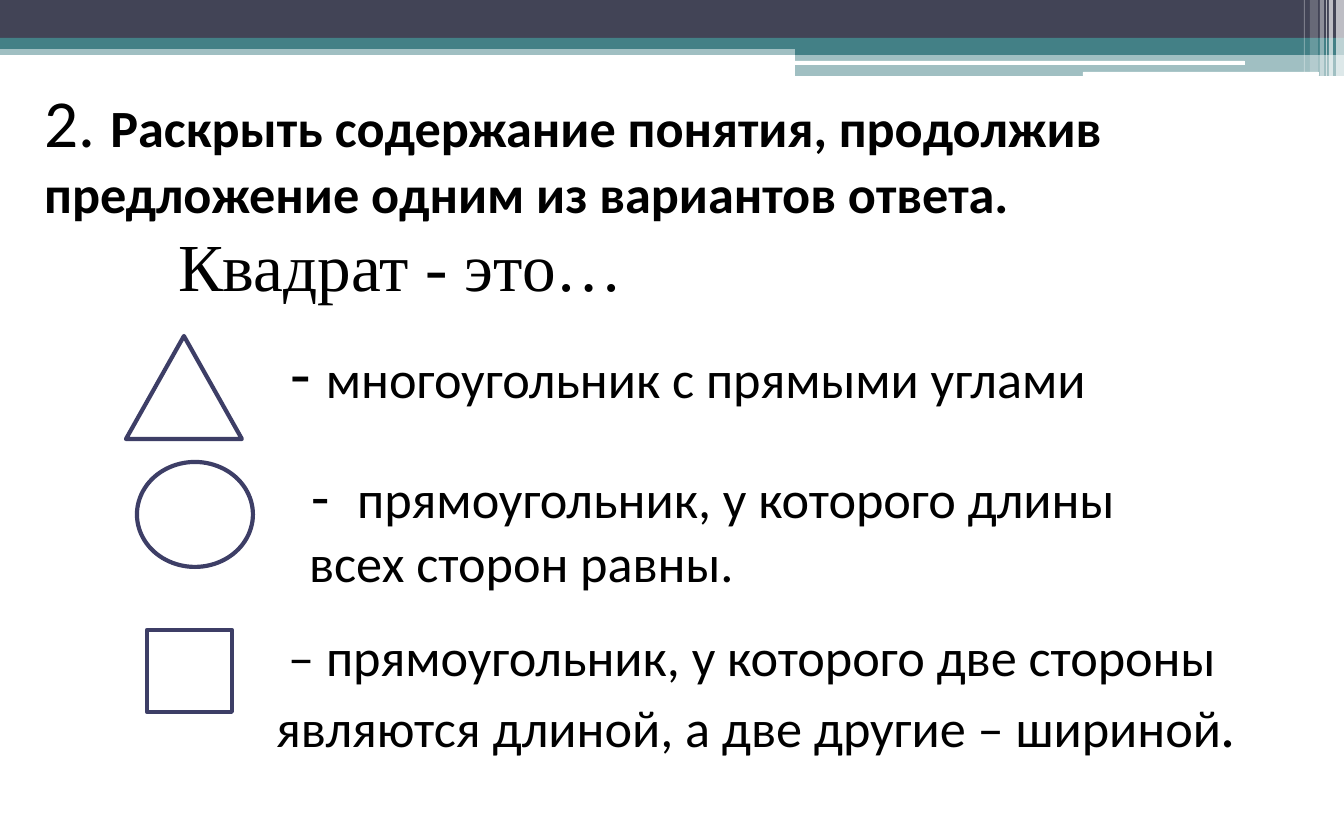
from lxml import etree
from pptx import Presentation
from pptx import util as u
from pptx.dml.color import RGBColor
from pptx.enum import shapes, text
from pptx.oxml.ns import qn

PX = 914400 / 134.4  # EMU per px
SHAPE = shapes.MSO_SHAPE
THEME = {
    "dark": "424456", "teal": "438086", "white": "FFFFFF",
    "outline": "3D3E66", "text": "000000",
    "font": "Calibri", "serif": "Times New Roman",
    "large": 36, "medium": 32, "body": 28, "line": 2.25,
}

presentation = Presentation()
presentation.slide_width = round(1344 * PX)
presentation.slide_height = round(840 * PX)
slide = presentation.slides.add_slide(presentation.slide_layouts[6])


def add_figure(kind, box, fill=None, opacity=100):
    """Add a filled bar, or an outlined figure when there is no fill."""
    shape = slide.shapes.add_shape(kind, *(round(side * PX) for side in box))
    shape.shadow.inherit = False
    if fill:
        shape.fill.solid()
        shape.fill.fore_color.rgb = RGBColor.from_string(THEME[fill])
        shape.line.fill.background()
        if opacity < 100:
            color = shape.fill._xPr.find(".//" + qn("a:srgbClr"))
            etree.SubElement(color, qn("a:alpha"), val=str(opacity * 1000))
    else:
        shape.fill.background()
        shape.line.color.rgb = RGBColor.from_string(THEME["outline"])
        shape.line.width = u.Pt(THEME["line"])


def add_text(paragraphs, box):
    """Each paragraph is (margin, first-line indent, runs of (words, format))."""
    shape = slide.shapes.add_textbox(*(round(side * PX) for side in box))
    frame = shape.text_frame
    frame.word_wrap = True
    frame.vertical_anchor = text.MSO_ANCHOR.TOP
    for index, (margin, indent, runs) in enumerate(paragraphs):
        paragraph = frame.add_paragraph() if index else frame.paragraphs[0]
        properties = paragraph._p.get_or_add_pPr()
        properties.set("marL", str(round(margin * PX)))
        properties.set("indent", str(round(indent * PX)))
        for words, style in runs:
            run = paragraph.add_run()
            run.text = words
            run.font.name = THEME[style.get("font", "font")]
            run.font.size = u.Pt(THEME[style.get("size", "body")])
            run.font.bold = style.get("bold", False)
            run.font.color.rgb = RGBColor.from_string(THEME["text"])


# Header bands
for box, fill, opacity in [
    ((0, 44, 1344, 11), "teal", 50),
    ((0, 0, 1344, 38), "dark", 100),
    ((0, 38, 1344, 11), "teal", 100),
    ((795, 44, 549, 11), "teal", 100),
    ((795, 54, 549, 22), "teal", 50),
]:
    add_figure(SHAPE.RECTANGLE, box, fill, opacity)

# White strips in the header
for box in [(794, 61, 451, 4), (1083, 72, 236, 4)]:
    add_figure(SHAPE.ROUNDED_RECTANGLE, box, "white")

# Translucent stripes at the right edge
for left, width, height, opacity in [
    (1336, 8, 76, 65), (1329, 4, 76, 65), (1326, 1, 76, 60),
    (1320, 4, 76, 40), (1310, 8, 72, 20), (1304, 1, 72, 30),
]:
    add_figure(SHAPE.RECTANGLE, (left, 0, width, height), "white", opacity)

# Task
add_text([
    (0, 0, [
        ("2. ", {"size": "large"}),
        ("Раскрыть содержание понятия, продолжив предложение "
         "одним из вариантов ответа.", {"bold": True}),
    ]),
    (134, 0, [("Квадрат - это…", {"size": "large", "font": "serif"})]),
], (31, 74, 1281, 239))

# Answer markers
for kind, box in [
    (SHAPE.ISOSCELES_TRIANGLE, (126, 336, 116, 103)),
    (SHAPE.OVAL, (137, 462, 116, 105)),
    (SHAPE.RECTANGLE, (147, 630, 85, 82)),
]:
    add_figure(kind, box)

# Answers
add_text([
    (15, 0, [("- ", {"size": "large"}), ("многоугольник с прямыми углами", {})]),
], (262, 325, 857, 95))
add_text([
    (60, -46, [("-\t", {"size": "medium"}), ("прямоугольник, у которого длины", {})]),
    (12, 0, [("всех сторон равны.", {})]),
], (284, 452, 852, 149))
add_text([
    (24, 0, [("– прямоугольник, у которого две стороны", {})]),
    (12, 0, [("являются длиной, а две другие – шириной", {}), (".", {"size": "medium"})]),
], (251, 618, 1050, 222))

presentation.save("out.pptx")
